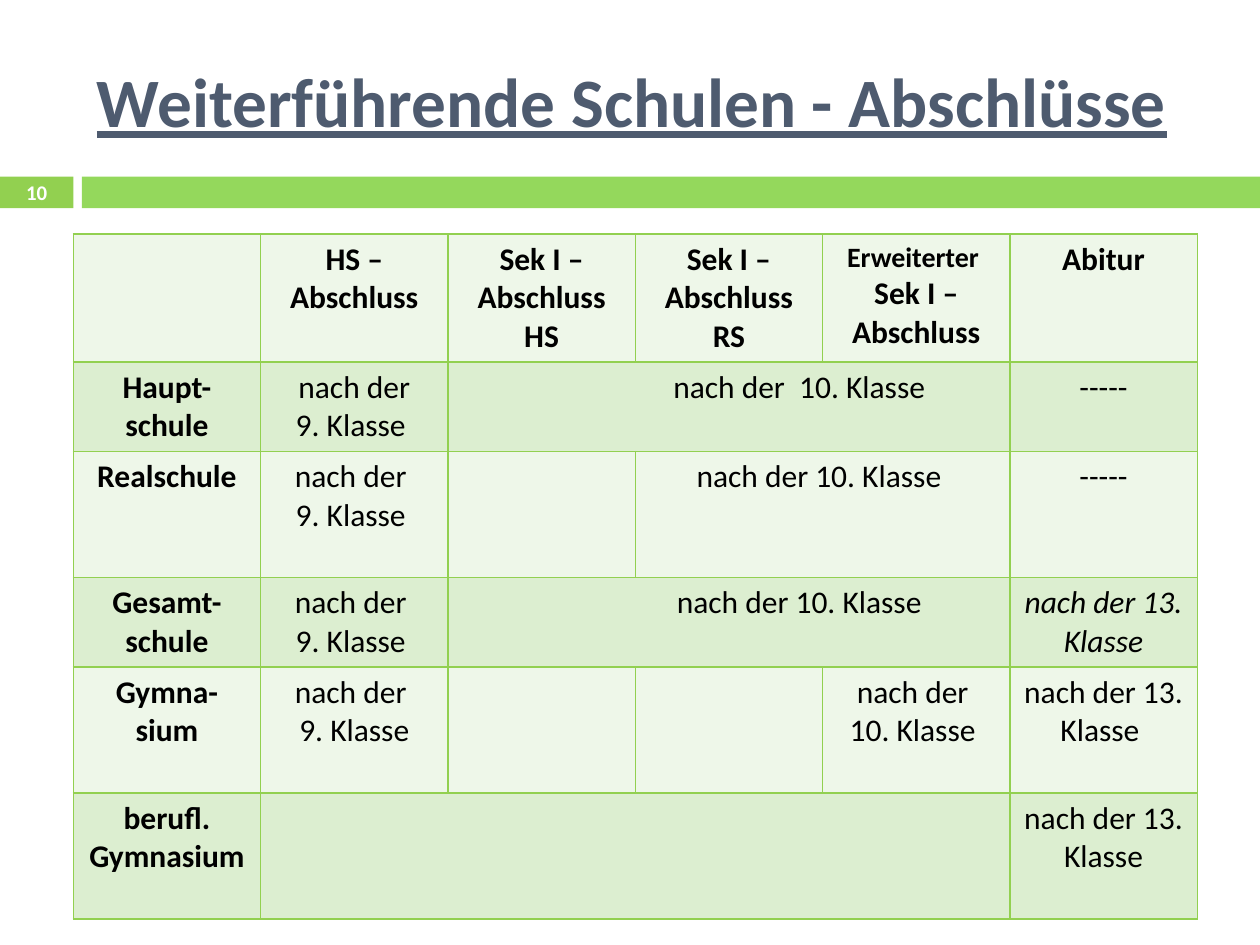
from dataclasses import dataclass

import pptx
import pptx.dml.color
import pptx.enum.text
import pptx.oxml
import pptx.oxml.ns
import pptx.util
from pptx.util import Cm

FONT = "Calibri"
COLORS = {
    "border": "92D050",
    "number_band": "92D050",
    "band": "94D85C",
    "title": "4E5B6F",
    "text": "000000",
    "number": "FFFFFF",
    "light_row": "EEF7E9",
    "dark_row": "DCEED0",
}
ALIGN = pptx.enum.text.PP_ALIGN
MIDDLE = pptx.enum.text.MSO_ANCHOR.MIDDLE


@dataclass
class Entry:
    """Table entry: one line of text per paragraph."""
    column: int
    lines: tuple[str, ...]
    span: int = 1
    bold: bool = False
    italic: bool = False
    first_size: float = 18
    indent: float = 0.25


@dataclass
class Row:
    height: float
    entries: list[Entry]


@dataclass
class Band:
    left: float
    width: float
    color: str


def head(column: int, *lines: str, first_size: float = 18) -> Entry:
    return Entry(column, lines, bold=True, first_size=first_size)


NINTH = Entry(1, ("nach der ", "9. Klasse "))
NO_ABITUR = Entry(5, ("-----",))
WIDE_INDENT = 3.23

ROWS = [
    Row(2.46, [head(1, "HS – Abschluss"), head(2, "Sek I – Abschluss HS"),
               head(3, "Sek I – Abschluss RS"),
               head(4, "Erweiterter ", "Sek I – Abschluss", first_size=16),
               head(5, "Abitur")]),
    Row(1.78, [head(0, "Haupt-schule"), Entry(1, ("nach der", "9. Klasse ")),
               Entry(2, ("nach der  10. Klasse ",), span=3, indent=WIDE_INDENT),
               NO_ABITUR]),
    Row(2.54, [head(0, "Realschule"), NINTH,
               Entry(3, ("nach der 10. Klasse ",), span=2), NO_ABITUR]),
    Row(1.78, [head(0, "Gesamt-schule"), NINTH,
               Entry(2, ("nach der 10. Klasse ",), span=3, indent=WIDE_INDENT),
               Entry(5, ("nach der 13. Klasse",), italic=True)]),
    Row(2.54, [head(0, "Gymna-sium"), Entry(1, ("nach der ", "9. Klasse")),
               Entry(4, ("nach der ", "10. Klasse ")),
               Entry(5, ("nach der 13. Klasse ",))]),
    Row(2.54, [head(0, "berufl. Gymnasium"), Entry(1, ("",), span=4),
               Entry(5, ("nach der 13. Klasse",))]),
]
COLUMN_COUNT = 6
BANDS = [Band(0, 1.48, "number_band"), Band(1.65, 23.75, "band")]


def rgb(name: str) -> pptx.dml.color.RGBColor:
    return pptx.dml.color.RGBColor.from_string(COLORS[name])


def style(paragraph, size: float, color: str, bold: bool, align) -> None:
    paragraph.alignment = align
    font = paragraph.font
    font.name, font.size, font.bold = FONT, pptx.util.Pt(size), bold
    font.color.rgb = rgb(color)


def add_title(slide, text: str) -> None:
    title = slide.shapes.title
    title.left, title.top, title.width, title.height = Cm(1.7), Cm(0.64), Cm(22.66), Cm(2.74)
    frame = title.text_frame
    frame.text = text
    frame.word_wrap = True
    frame.auto_size = pptx.enum.text.MSO_AUTO_SIZE.NONE
    frame.vertical_anchor = MIDDLE
    style(frame.paragraphs[0], 39.6, "title", True, ALIGN.LEFT)
    frame.paragraphs[0].font.underline = True


def add_band(slide, band: Band) -> None:
    bar = slide.shapes.add_shape(pptx.enum.shapes.MSO_SHAPE.RECTANGLE,
                                 Cm(band.left), Cm(3.56), Cm(band.width), Cm(0.64))
    bar.shadow.inherit = False
    bar.fill.solid()
    bar.fill.fore_color.rgb = rgb(band.color)
    bar.line.fill.background()


def add_page_number(slide, number: str) -> None:
    frame = slide.shapes.add_textbox(Cm(0), Cm(3.53), Cm(1.48), Cm(0.69)).text_frame
    frame.word_wrap = True
    frame.vertical_anchor = MIDDLE
    frame.margin_top = frame.margin_bottom = 0
    frame.text = number
    style(frame.paragraphs[0], 11.9, "number", True, ALIGN.CENTER)


def add_borders(cell) -> None:
    properties = cell._tc.get_or_add_tcPr()
    for side in ("lnL", "lnR", "lnT", "lnB"):
        properties.append(pptx.oxml.parse_xml(
            f'<a:{side} {pptx.oxml.ns.nsdecls("a")} w="12700"><a:solidFill>'
            f'<a:srgbClr val="{COLORS["border"]}"/></a:solidFill></a:{side}>'))


def fill_entry(table, row_index: int, entry: Entry) -> None:
    cell = table.cell(row_index, entry.column)
    if entry.span > 1:
        cell.merge(table.cell(row_index, entry.column + entry.span - 1))
    cell.margin_left = Cm(entry.indent)
    cell.text_frame.text = "\n".join(entry.lines)
    for index, paragraph in enumerate(cell.text_frame.paragraphs):
        size = 18 if index else entry.first_size
        style(paragraph, size, "text", entry.bold, ALIGN.CENTER)
        paragraph.font.italic = entry.italic


def add_school_table(slide, rows: list[Row]) -> None:
    height = sum(row.height for row in rows)
    table = slide.shapes.add_table(len(rows), COLUMN_COUNT, Cm(1.48), Cm(4.72),
                                   Cm(22.66), Cm(height)).table
    for row_index, row in enumerate(rows):
        table.rows[row_index].height = Cm(row.height)
        for cell in table.rows[row_index].cells:
            add_borders(cell)
            cell.fill.solid()
            cell.fill.fore_color.rgb = rgb("dark_row" if row_index % 2 else "light_row")
        for entry in row.entries:
            fill_entry(table, row_index, entry)


def main() -> None:
    presentation = pptx.Presentation()
    presentation.slide_width, presentation.slide_height = Cm(25.4), Cm(19.05)
    slide = presentation.slides.add_slide(presentation.slide_layouts[5])
    for band in BANDS:
        add_band(slide, band)
    add_title(slide, "Weiterführende Schulen - Abschlüsse")
    add_school_table(slide, ROWS)
    add_page_number(slide, "10")
    presentation.save("out.pptx")


if __name__ == "__main__":
    main()
